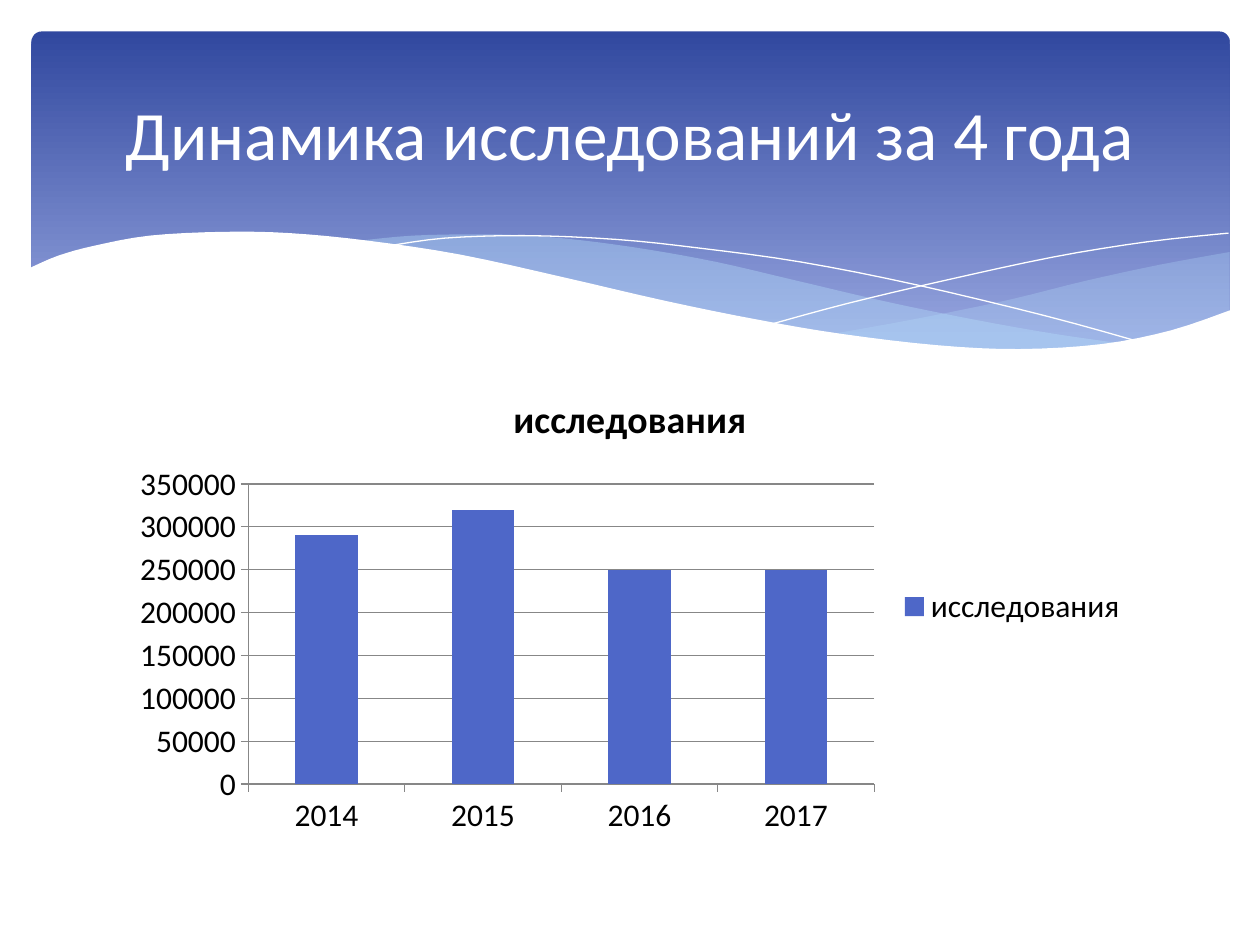
from lxml import etree
from pptx import Presentation, util as u
from pptx.chart.data import CategoryChartData
from pptx.dml.color import RGBColor
from pptx.enum import chart as kinds, shapes, text
from pptx.oxml.ns import qn

COLUMNS, ROWS = 10, 7.5
CELL = u.Inches(1)
FONT = "Calibri"
WHITE, BLACK, GREY, BLUE, PALE = "FFFFFF", "000000", "878787", "4E67C8", "B4DCFA"

RIGHT_SWELL = [
    [(9.76, 2), (9.21, 2.1), (8.61, 2.23), (8.05, 2.37), (7.53, 2.48), (7.06, 2.57), (6.61, 2.65)],
    [(6.61, 2.65), (7.05, 2.71), (7.57, 2.76), (8.03, 2.78), (8.54, 2.76), (8.97, 2.7), (9.35, 2.62), (9.76, 2.47)],
]
LONG_SWELL = [
    [(8.93, 2.73), (8.37, 2.65), (7.75, 2.54), (7.06, 2.4), (6.29, 2.22), (5.69, 2.08), (5.14, 1.98),
     (4.64, 1.91), (4.2, 1.87), (3.8, 1.86), (3.28, 1.87), (2.86, 1.91)],
    [(2.86, 1.91), (3.42, 1.99), (4.04, 2.11), (4.49, 2.22), (5.3, 2.4), (6.01, 2.55), (6.65, 2.66),
     (7.22, 2.74), (7.73, 2.78), (8.18, 2.79), (8.57, 2.77), (8.93, 2.73)],
]
FALLING_LINE = [[(3.09, 1.95), (3.53, 1.89), (4.16, 1.87), (4.89, 1.9), (5.56, 1.97), (6.36, 2.08),
                 (7.27, 2.26), (8.31, 2.51), (9.07, 2.72)]]
RISING_LINE = [[(6.13, 2.57), (6.72, 2.41), (7.48, 2.23), (8.36, 2.04), (9.1, 1.92), (9.75, 1.85)]]
FRONT_WAVE = [
    [(9.77, 2.46), (9.3, 2.62), (8.75, 2.73), (8.09, 2.77), (7.44, 2.74), (6.68, 2.65), (6.03, 2.54),
     (5.29, 2.39), (4.47, 2.2), (3.65, 2.02), (2.92, 1.91), (2.3, 1.85), (1.77, 1.84), (1.19, 1.87),
     (0.75, 1.95), (0.46, 2.03), (0.23, 2.13)],
    [(0.23, 3.29), (9.77, 3.29)],
]


def color(value):
    """Turn a hex string into a colour."""
    return RGBColor.from_string(value)


def cells(*lengths):
    """Turn grid lengths into slide lengths."""
    return [u.Emu(round(length * CELL)) for length in lengths]


def smooth(knots, steps=4):
    """Return points of a Catmull-Rom curve through the knots."""
    if len(knots) == 2:
        return knots
    padded = [knots[0], *knots, knots[-1]]
    points = [knots[0]]
    for a, b, c, d in zip(padded, padded[1:], padded[2:], padded[3:]):
        for step in range(1, steps + 1):
            t = step / steps
            points.append(tuple(
                (2 * q + (r - p) * t + (2 * p - 5 * q + 4 * r - s) * t**2
                 + (3 * q - p - 3 * r + s) * t**3) / 2
                for p, q, r, s in zip(a, b, c, d)))
    return points


def outline(page, curves, closed):
    """Join smoothed curves into one freeform."""
    points = [cells(*point) for curve in curves for point in smooth(curve)]
    builder = page.shapes.build_freeform(*points[0])
    builder.add_line_segments(points[1:], close=closed)
    shape = builder.convert_to_shape()
    shape.shadow.inherit = False
    return shape


def add_wave(page, curves, fill, opacity=100):
    """Add a filled wave without a border."""
    wave = outline(page, curves, True)
    wave.fill.solid()
    wave.fill.fore_color.rgb = color(fill)
    wave.line.fill.background()
    if opacity < 100:
        tint = wave.fill._xPr.find(qn("a:solidFill"))[0]
        etree.SubElement(tint, qn("a:alpha"), val=str(opacity * 1000))


def add_hairline(page, curves):
    """Add a thin white curve."""
    curve = outline(page, curves, False)
    curve.fill.background()
    curve.line.color.rgb = color(WHITE)
    curve.line.width = u.Pt(0)


def add_banner(page):
    """Add the rounded banner with its vertical gradient."""
    banner = page.shapes.add_shape(
        shapes.MSO_SHAPE.ROUNDED_RECTANGLE, *cells(0.25, 0.25, COLUMNS - 0.49, 2.7))
    banner.adjustments[0] = 0.03
    banner.shadow.inherit = False
    banner.line.fill.background()
    banner.fill.gradient()
    banner.fill.gradient_angle = 270
    for stop, (place, tone) in zip(banner.fill.gradient_stops, [(0, "31489F"), (0.9, "95A4DE")]):
        stop.position = place
        stop.color.rgb = color(tone)


def style_font(font, size, tone, bold=False):
    """Set face, size, colour and weight."""
    font.name, font.size, font.bold = FONT, u.Pt(size), bold
    font.color.rgb = color(tone)


def add_title(page, words):
    """Add the centred slide title."""
    box = page.shapes.add_textbox(*cells(0.5, 0.37, COLUMNS - 1, 1.37))
    frame = box.text_frame
    frame.word_wrap = True
    frame.vertical_anchor = text.MSO_ANCHOR.MIDDLE
    para = frame.paragraphs[0]
    para.alignment = text.PP_ALIGN.CENTER
    span = para.add_run()
    span.text = words
    style_font(span.font, 39.6, WHITE)


def add_column_chart(page, name, values):
    """Add the chart of yearly totals."""
    data = CategoryChartData()
    data.categories = list(values)
    data.add_series(name, list(values.values()))
    chart = page.shapes.add_chart(
        kinds.XL_CHART_TYPE.COLUMN_STACKED, *cells(0.95, 2.93, COLUMNS - 1.9, 3.77), data).chart
    style_font(chart.font, 18, BLACK)
    chart.has_title = True
    span = chart.chart_title.text_frame.paragraphs[0].add_run()
    span.text = name
    style_font(span.font, 21.6, BLACK, True)
    chart.has_legend = True
    chart.legend.position = kinds.XL_LEGEND_POSITION.RIGHT
    chart.legend.include_in_layout = False
    plot = chart.plots[0]
    plot.gap_width, plot.overlap, plot.vary_by_categories = 150, 100, False
    bars = plot.series[0].format.fill
    bars.solid()
    bars.fore_color.rgb = color(BLUE)
    scale = chart.value_axis
    scale.minimum_scale, scale.maximum_scale, scale.major_unit = 0, 350000, 50000
    scale.has_major_gridlines = True
    for axis in (chart.category_axis, scale):
        axis.major_tick_mark = kinds.XL_TICK_MARK.OUTSIDE
    for part in (chart.category_axis, scale, scale.major_gridlines):
        part.format.line.color.rgb = color(GREY)
        part.format.line.width = u.Pt(0.75)


def main():
    """Build the slide and save it."""
    deck = Presentation()
    deck.slide_width, deck.slide_height = cells(COLUMNS, ROWS)
    page = deck.slides.add_slide(deck.slide_layouts[6])
    add_banner(page)
    add_wave(page, RIGHT_SWELL, PALE, 29)
    add_wave(page, LONG_SWELL, PALE, 40)
    add_hairline(page, FALLING_LINE)
    add_hairline(page, RISING_LINE)
    add_wave(page, FRONT_WAVE, WHITE)
    add_column_chart(page, "исследования", {
        "2014": 290000, "2015": 320000, "2016": 250000, "2017": 250000})
    add_title(page, "Динамика исследований за 4 года")
    deck.save("out.pptx")


if __name__ == "__main__":
    main()
